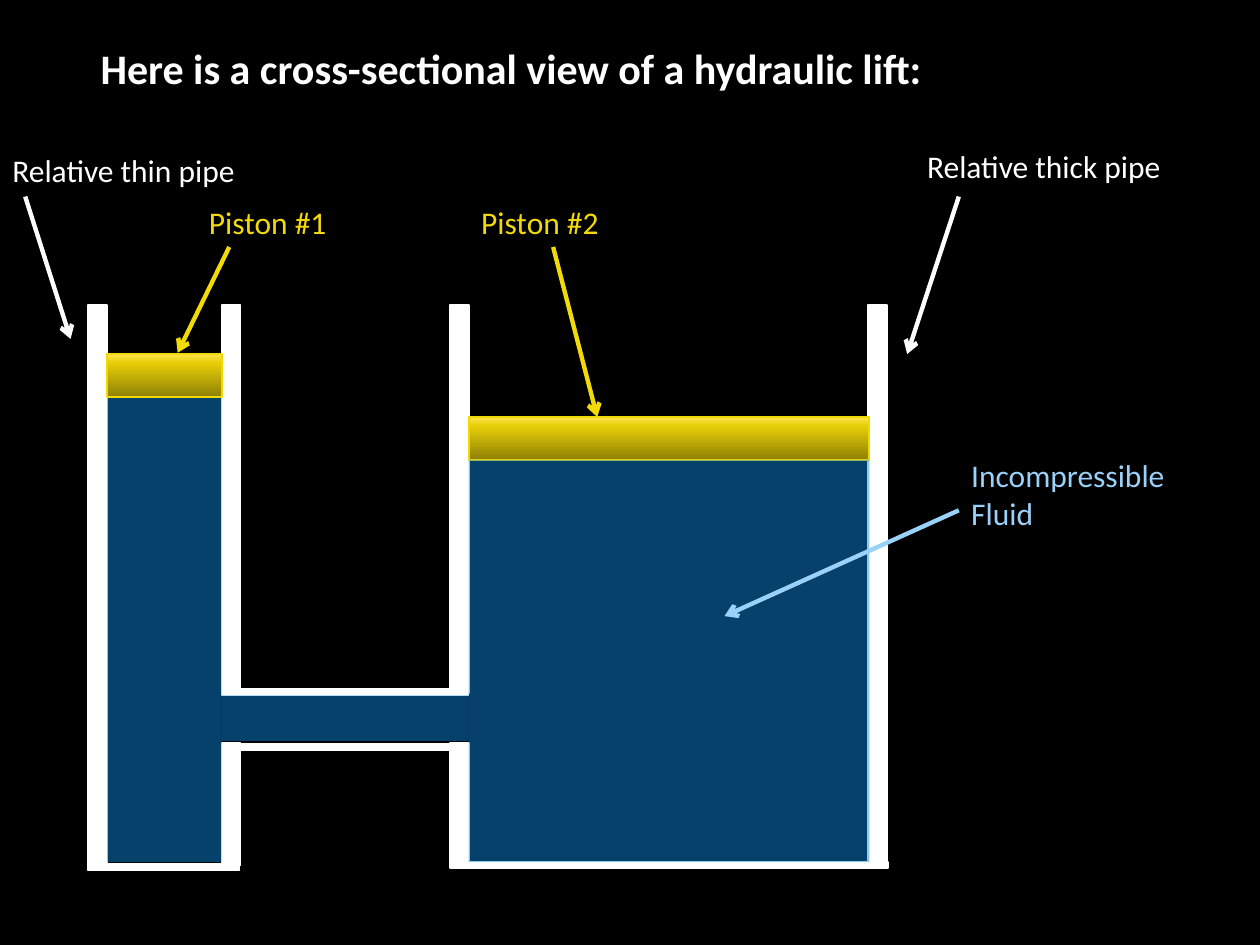
from copy import deepcopy

from lxml.etree import SubElement
from pptx import Presentation
from pptx.dml.color import RGBColor
from pptx.enum.shapes import MSO_CONNECTOR, MSO_SHAPE
from pptx.enum.text import MSO_ANCHOR
from pptx.oxml.ns import qn
from pptx.util import Inches, Pt

WHITE, YELLOW, PALE_BLUE = "FFFFFF", "F2D908", "9AD1F9"
FLUID_BLUE, PISTON_EDGE = "0D8BE6", "F2D902"
color = RGBColor.from_string


def add_text(text, left, top, width, height, size=18, hue=WHITE, bold=False, wrap=False):
    box = slide.shapes.add_textbox(Inches(left), Inches(top), Inches(width), Inches(height))
    frame = box.text_frame
    frame.word_wrap = wrap
    frame.vertical_anchor = MSO_ANCHOR.TOP
    frame.text = text
    font = frame.paragraphs[0].font
    font.name, font.size, font.bold = "Calibri", Pt(size), bold
    font.color.rgb = color(hue)


def add_block(left, top, width, height, edge=None):
    block = slide.shapes.add_shape(
        MSO_SHAPE.RECTANGLE, Inches(left), Inches(top), Inches(width), Inches(height))
    block.shadow.inherit = False
    if edge:
        block.line.color.rgb = color(edge)
        block.line.width = Pt(1)
    else:
        block.line.fill.background()
    return block


prs = Presentation()
prs.slide_width, prs.slide_height = Inches(10), Inches(7.5)
slide = prs.slides.add_slide(prs.slide_layouts[6])
slide.background.fill.solid()
slide.background.fill.fore_color.rgb = color("000000")

add_text("Here is a cross-sectional view of a hydraulic lift:",
         0.7, 0.29, 8.44, 0.87, size=24, bold=True, wrap=True)

# Pipe walls: outer sides run full height, inner sides leave room for the channel
WALL, FLOOR, RIM = 0.15, 0.05, 2.42
THIN_LEFT, THIN_RIGHT, THICK_LEFT, THICK_RIGHT = 0.7, 1.76, 3.57, 6.89
walls = [(left, RIM, WALL, 4.46) for left in (THIN_LEFT, THICK_RIGHT)]
for left in (THIN_RIGHT, THICK_LEFT):
    walls += [(left, RIM, WALL, 3.08), (left, 5.9, WALL, 0.97)]
channel_width = THICK_LEFT + WALL - THIN_RIGHT
walls += [(THIN_RIGHT, top, channel_width, FLOOR) for top in (5.47, 5.9)]
walls += [(THIN_LEFT, 6.86, 1.2, FLOOR), (THICK_LEFT, 6.84, 3.48, FLOOR)]
for wall in walls:
    block = add_block(*wall, edge=WHITE)
    block.fill.solid()
    block.fill.fore_color.rgb = color(WHITE)

# Pistons, shaded from dark at the bottom to bright at the top
thin_bore = (THIN_LEFT + WALL, 0.91)
thick_bore = (THICK_LEFT + WALL, 3.18)
shades = [(0, "8F8105"), (0.8, "E7CF08"), (1, "FFE552")]
for (left, width), top in ((thin_bore, 2.81), (thick_bore, 3.31)):
    piston = add_block(left, top, width, 0.34, edge=PISTON_EDGE)
    piston.fill.gradient()
    piston.fill.gradient_angle = 90
    stop_list = piston._element.spPr.find(qn("a:gradFill")).find(qn("a:gsLst"))
    stop_list.append(deepcopy(stop_list[-1]))
    for stop, (position, shade) in zip(piston.fill.gradient_stops, shades):
        stop.position = position
        stop.color.rgb = color(shade)

# Translucent fluid in both pipes and the channel
for left, top, width, height in ((thin_bore[0], 3.16, thin_bore[1], 3.68),
                                 (thick_bore[0], 3.65, thick_bore[1], 3.19),
                                 (THIN_RIGHT, 5.52, channel_width, 0.36)):
    fluid = add_block(left, top, width, height)
    fluid.fill.solid()
    fluid.fill.fore_color.rgb = color(FLUID_BLUE)
    tint = fluid._element.spPr.find(qn("a:solidFill"))[0]
    SubElement(tint, qn("a:alpha"), val="47000")

# Labels, each with an arrow to its part
labels = [
    ("Relative thin pipe", (0, 1.15, 2.06, 0.4), WHITE, (0.2, 1.56, 0.56, 2.69)),
    ("Relative thick pipe", (7.26, 1.12, 2.16, 0.4), WHITE, (7.61, 1.56, 7.2, 2.81)),
    ("Piston #1", (1.56, 1.56, 1.14, 0.4), YELLOW, (1.82, 1.96, 1.41, 2.8)),
    ("Piston #2", (3.72, 1.56, 1.17, 0.4), YELLOW, (4.39, 1.96, 4.74, 3.31)),
    ("Incompressible Fluid", (7.61, 3.57, 1.95, 0.71), PALE_BLUE, (7.61, 4.05, 5.75, 4.89)),
]
for text, place, hue, ends in labels:
    add_text(text, *place, hue=hue, wrap=text == "Incompressible Fluid")
    arrow = slide.shapes.add_connector(MSO_CONNECTOR.STRAIGHT, *map(Inches, ends))
    arrow.line.color.rgb = color(hue)
    arrow.line.width = Pt(2.5)
    SubElement(arrow.line._get_or_add_ln(), qn("a:tailEnd"), type="arrow")
    SubElement(arrow._element.spPr, qn("a:effectLst"))

prs.save("out.pptx")
